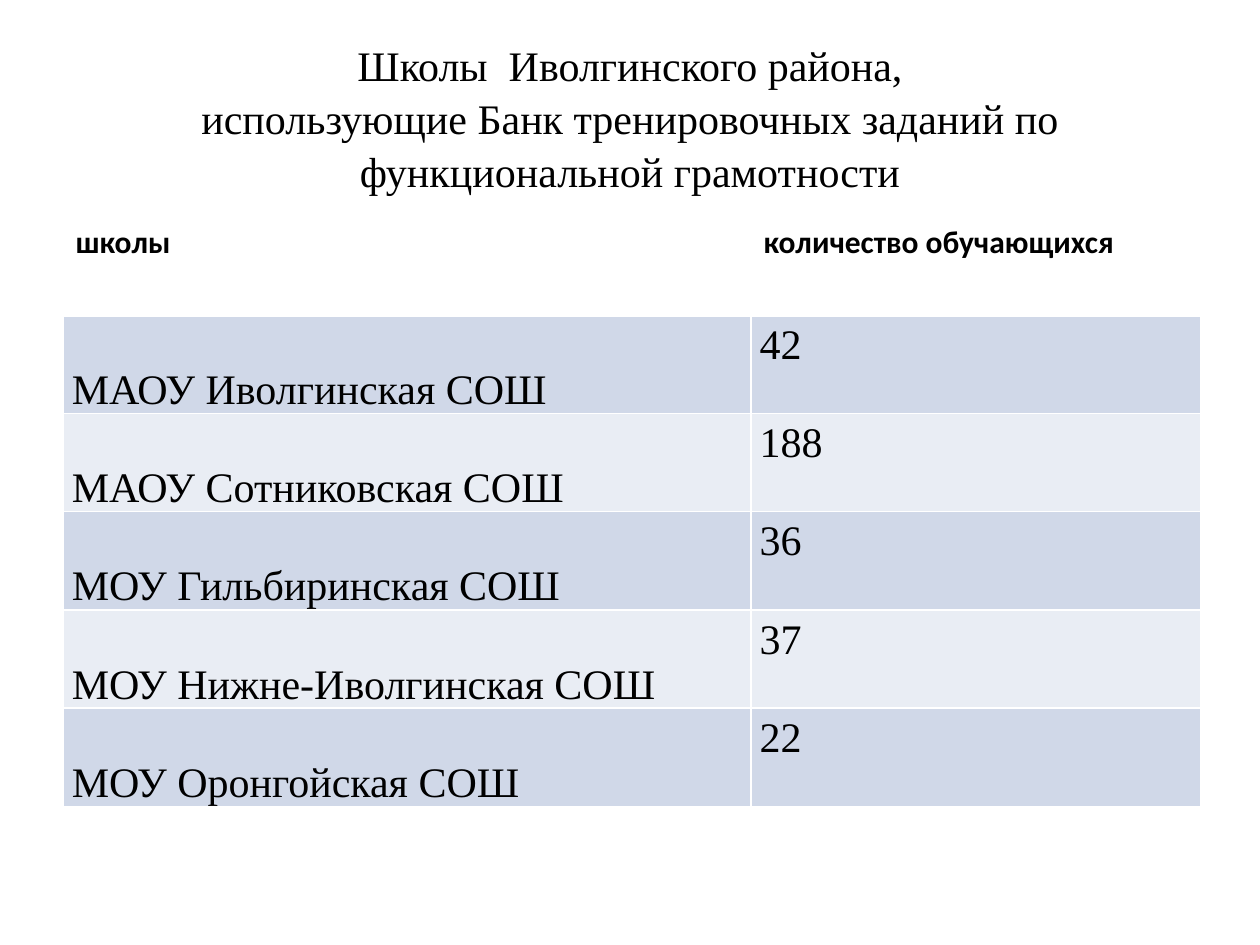
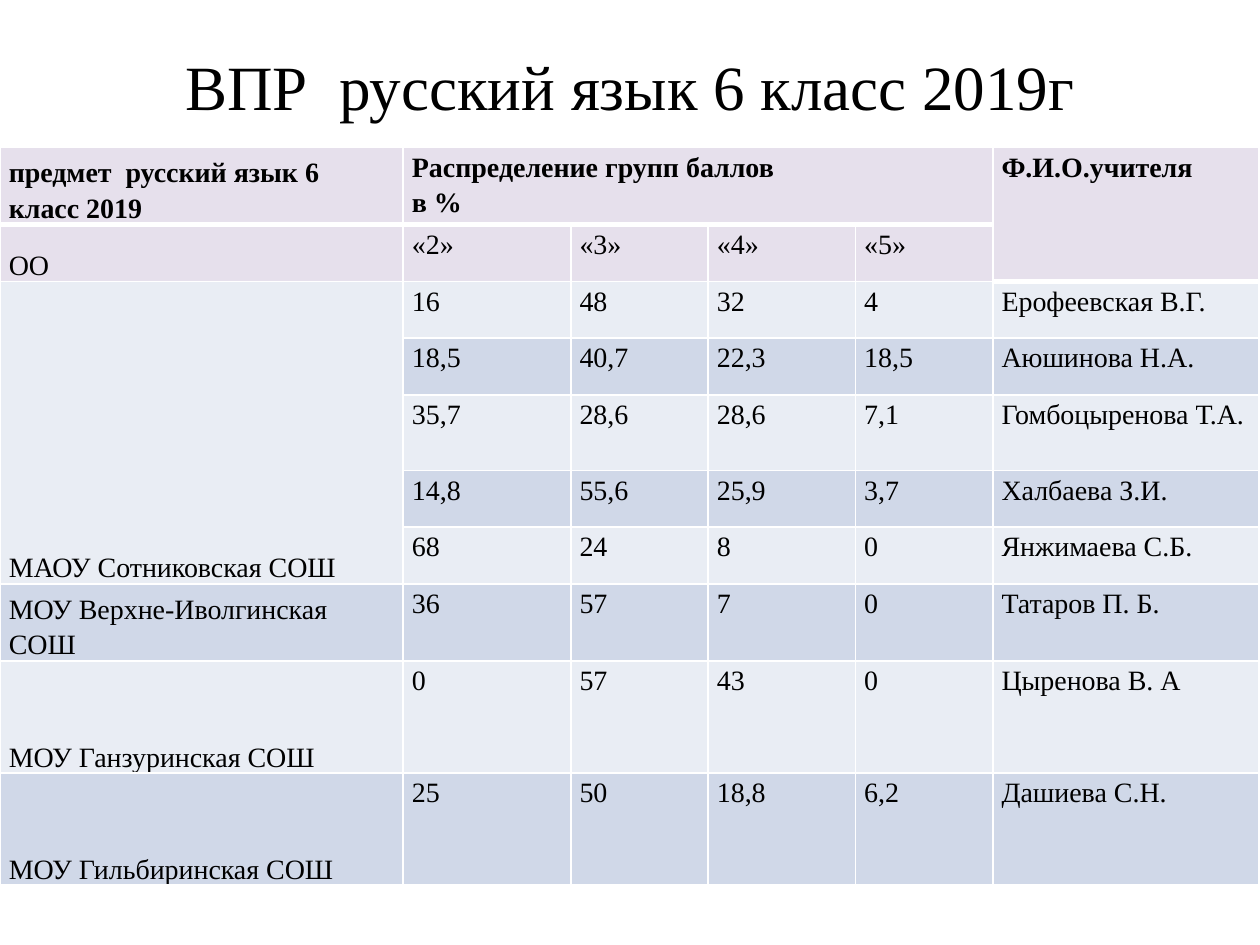
from lxml import etree
from pptx import Presentation
from pptx.dml.color import RGBColor
from pptx.enum.text import MSO_ANCHOR, PP_ALIGN
from pptx.oxml.ns import qn
from pptx.util import Inches, Pt

# Shared look
WHITE, BLACK = "FFFFFF", "000000"
BAND_DARK, BAND_LIGHT, LILAC = "D0D8E8", "E9EDF4", "E6E0EC"
SERIF, SANS = "Times New Roman", "Calibri"
BLANK_LAYOUT = 6
TITLE_BOX = (0.5, 0.3, 9, 1.25)
TIGHT_MARGINS = {
    "margin_left": Inches(0.07), "margin_right": Inches(0.07),
    "margin_top": 0, "margin_bottom": 0,
}

# Content
SCHOOL_ROWS = [
    ("школы", "количество обучающихся"),
    ("МАОУ Иволгинская СОШ", "42"),
    ("МАОУ Сотниковская СОШ", "188"),
    ("МОУ Гильбиринская СОШ", "36"),
    ("МОУ Нижне-Иволгинская СОШ", "37"),
    ("МОУ Оронгойская СОШ", "22"),
]
SCORE_ROWS = [
    ("предмет  русский язык 6 класс 2019", "Распределение групп баллов\nв %",
     None, None, None, "Ф.И.О.учителя"),
    ("ОО", "«2»", "«3»", "«4»", "«5»", None),
    ("МАОУ Сотниковская СОШ", "16", "48", "32", "4", "Ерофеевская В.Г."),
    (None, "18,5", "40,7", "22,3", "18,5", "Аюшинова Н.А."),
    (None, "35,7", "28,6", "28,6", "7,1", "Гомбоцыренова Т.А."),
    (None, "14,8", "55,6", "25,9", "3,7", "Халбаева З.И."),
    (None, "68", "24", "8", "0", "Янжимаева С.Б."),
    ("МОУ Верхне-Иволгинская СОШ", "36", "57", "7", "0", "Татаров П. Б."),
    ("МОУ Ганзуринская СОШ", "0", "57", "43", "0", "Цыренова В. А"),
    ("МОУ Гильбиринская СОШ", "25", "50", "18,8", "6,2", "Дашиева С.Н."),
]


def color(hex_value):
    return RGBColor.from_string(hex_value)


def apply_format(target, values):
    for name, value in values.items():
        setattr(target, name, value)


def format_font(font, name, size, bold=False):
    apply_format(font, {"name": name, "size": Pt(size), "bold": bold})
    font.color.rgb = color(BLACK)


def add_title(slide, text, size, anchor):
    shape = slide.shapes.add_textbox(*map(Inches, TITLE_BOX))
    apply_format(shape.text_frame, {"word_wrap": True, "vertical_anchor": anchor})
    paragraph = shape.text_frame.paragraphs[0]
    apply_format(paragraph, {"alignment": PP_ALIGN.CENTER, "line_spacing": 1.05})
    for index, line in enumerate(text.split("\n")):
        if index:
            paragraph.add_line_break()
        run = paragraph.add_run()
        run.text = line
        format_font(run.font, SERIF, size)


def set_borders(cell, bottom_width=1):
    properties = cell._tc.get_or_add_tcPr()
    for side, width in (("L", 1), ("R", 1), ("T", 1), ("B", bottom_width)):
        line = etree.SubElement(properties, qn(f"a:ln{side}"), w=str(Pt(width)))
        fill = etree.SubElement(line, qn("a:solidFill"))
        etree.SubElement(fill, qn("a:srgbClr"), val=WHITE)


def fill_cell(cell, fill, bottom_width=1):
    set_borders(cell, bottom_width)
    cell.fill.solid()
    cell.fill.fore_color.rgb = color(fill)


def write_cell(cell, text, font, cell_format, paragraph_format):
    apply_format(cell, cell_format)
    if text is None:
        return
    cell.text = text
    for paragraph in cell.text_frame.paragraphs:
        apply_format(paragraph, paragraph_format)
        for run in paragraph.runs:
            format_font(run.font, *font)


def add_table(slide, left, top, column_widths, row_heights):
    frame = slide.shapes.add_table(
        len(row_heights), len(column_widths), Inches(left), Inches(top),
        Inches(sum(column_widths)), Inches(sum(row_heights)))
    for column, width in zip(frame.table.columns, column_widths):
        column.width = Inches(width)
    for row, height in zip(frame.table.rows, row_heights):
        row.height = Inches(height)
    return frame.table


def body_format(column_index):
    anchor = MSO_ANCHOR.TOP if column_index else MSO_ANCHOR.BOTTOM
    return {**TIGHT_MARGINS, "vertical_anchor": anchor}


def add_schools_table(slide):
    table = add_table(slide, 0.5, 1.72, [5.46, 3.57], [0.78] * len(SCHOOL_ROWS))
    for row_index, texts in enumerate(SCHOOL_ROWS):
        for column_index, text in enumerate(texts):
            cell = table.cell(row_index, column_index)
            if row_index == 0:
                fill_cell(cell, WHITE, 3)
                write_cell(cell, text, (SANS, 18, True), {}, {})
            else:
                fill_cell(cell, BAND_DARK if row_index % 2 else BAND_LIGHT)
                write_cell(cell, text, (SERIF, 24), body_format(column_index),
                           {"line_spacing": 1.15})


def add_scores_table(slide):
    table = add_table(slide, 0, 1.17, [3.2, 1.33, 1.09, 1.17, 1.09, 2.11],
                      [0.6, 0.45, 0.45, 0.45, 0.6, 0.45, 0.45, 0.6, 0.89, 0.89])
    for row_index, texts in enumerate(SCORE_ROWS):
        for column_index, text in enumerate(texts):
            cell = table.cell(row_index, column_index)
            is_heading = row_index < 2
            band = BAND_DARK if row_index % 2 else BAND_LIGHT
            ends_header = row_index == 0 or (row_index == 1 and column_index == 5)
            fill_cell(cell, LILAC if is_heading else band, 3 if ends_header else 1)
            paragraph_format = {"line_spacing": 1.15}
            if column_index and not is_heading:
                paragraph_format["space_after"] = Pt(10)
            write_cell(cell, text, (SERIF, 16, row_index == 0),
                       body_format(column_index), paragraph_format)
    # Score heading, teacher heading and the school with five classes
    for first, last in (((0, 1), (0, 4)), ((0, 5), (1, 5)), ((2, 0), (6, 0))):
        table.cell(*first).merge(table.cell(*last))


def main():
    presentation = Presentation()
    apply_format(presentation, {"slide_width": Inches(10), "slide_height": Inches(7.5)})
    layout = presentation.slide_layouts[BLANK_LAYOUT]

    # Schools using the task bank
    slide = presentation.slides.add_slide(layout)
    add_title(slide, "Школы  Иволгинского района,\nиспользующие Банк тренировочных "
              "заданий по функциональной грамотности", 24, MSO_ANCHOR.MIDDLE)
    add_schools_table(slide)

    # Test scores by school and teacher
    slide = presentation.slides.add_slide(layout)
    add_title(slide, "ВПР  русский язык 6 класс 2019г", 36, MSO_ANCHOR.TOP)
    add_scores_table(slide)

    presentation.save("out.pptx")


if __name__ == "__main__":
    main()
